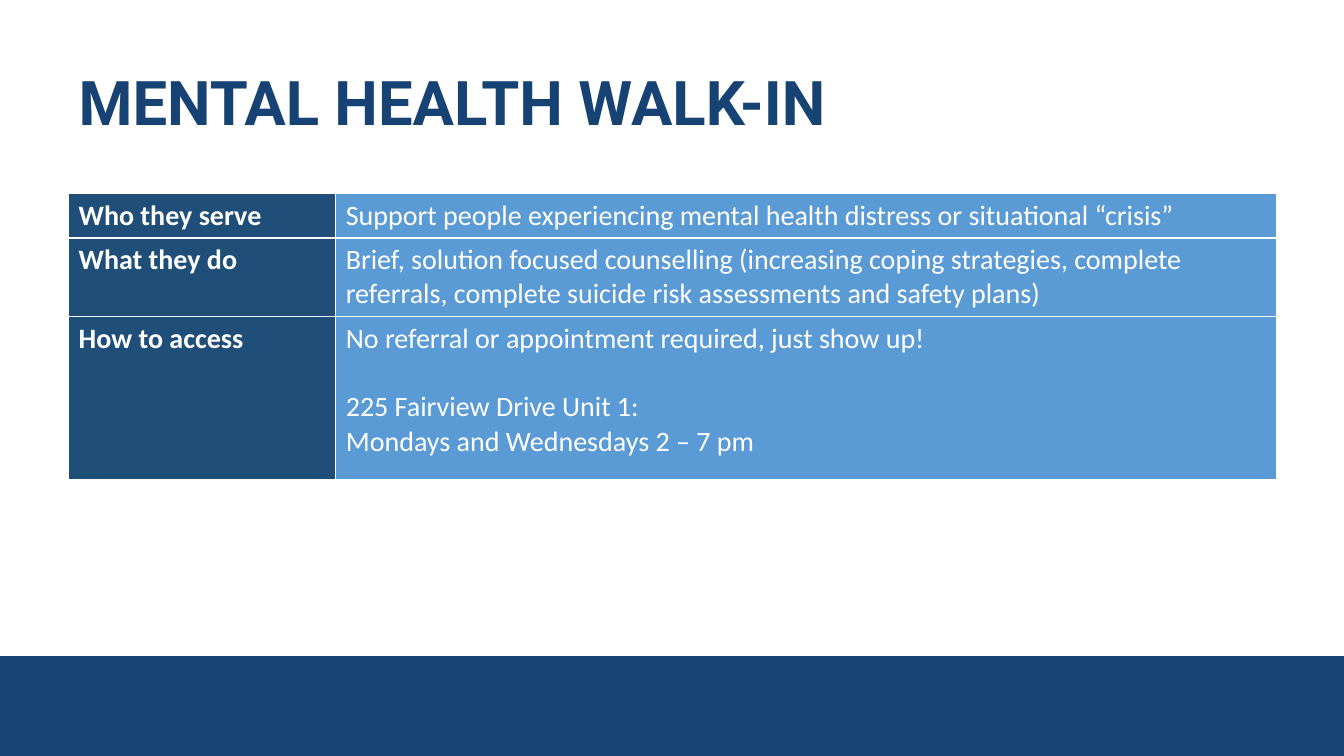
from dataclasses import dataclass

import lxml.etree
import pptx
import pptx.dml.color
import pptx.enum.shapes
import pptx.enum.text
import pptx.oxml.ns
import pptx.presentation
import pptx.slide
import pptx.table
import pptx.util
from pptx.util import Inches

COLORS = {
    "navy": "174274",
    "label": "1F4E79",
    "detail": "5B9BD5",
    "white": "FFFFFF",
}
MARGIN = 0.68
CONTENT_WIDTH = 11.98
LABEL_WIDTH = 2.65


@dataclass
class ServiceRow:
    label: str
    details: list[str]
    height: float


SERVICE_ROWS = [
    ServiceRow(
        "Who they serve",
        ["Support people experiencing mental health distress or situational “crisis”"],
        0.44,
    ),
    ServiceRow(
        "What they do",
        ["Brief, solution focused counselling (increasing coping strategies, complete "
         "referrals, complete suicide risk assessments and safety plans)"],
        0.78,
    ),
    ServiceRow(
        "How to access",
        ["No referral or appointment required, just show up!",
         "225 Fairview Drive Unit 1:",
         "Mondays and Wednesdays 2 – 7 pm"],
        1.62,
    ),
]
ADDRESS_PREFIX = "225 Fairview"


def color(name: str) -> pptx.dml.color.RGBColor:
    return pptx.dml.color.RGBColor.from_string(COLORS[name])


def add_footer_band(page: pptx.slide.Slide) -> None:
    band = page.shapes.add_shape(
        pptx.enum.shapes.MSO_SHAPE.RECTANGLE,
        Inches(0), Inches(6.51), Inches(13.33), Inches(0.99),
    )
    band.shadow.inherit = False
    band.fill.solid()
    band.fill.fore_color.rgb = color("navy")
    band.line.fill.background()


def format_title(page: pptx.slide.Slide, text: str) -> None:
    title = page.shapes.title
    title.left, title.top = Inches(MARGIN), Inches(0.4)
    title.width, title.height = Inches(CONTENT_WIDTH), Inches(1.29)
    title.text_frame.text = text
    title.text_frame.vertical_anchor = pptx.enum.text.MSO_ANCHOR.MIDDLE
    para = title.text_frame.paragraphs[0]
    para.alignment = pptx.enum.text.PP_ALIGN.LEFT
    para.line_spacing = 0.9
    para.font.name = "Roboto"
    para.font.size = pptx.util.Pt(44)
    para.font.bold = True
    para.font.color.rgb = color("navy")


def add_cell_borders(cell: pptx.table._Cell) -> None:
    properties = cell._tc.get_or_add_tcPr()
    qn = pptx.oxml.ns.qn
    for position, side in enumerate(("a:lnL", "a:lnR", "a:lnT", "a:lnB")):
        border = lxml.etree.Element(qn(side), w=str(pptx.util.Pt(1)))
        fill = lxml.etree.SubElement(border, qn("a:solidFill"))
        lxml.etree.SubElement(fill, qn("a:srgbClr"), val=COLORS["white"])
        properties.insert(position, border)


def fill_cell(cell: pptx.table._Cell, lines: list[str], fill: str, bold: bool) -> None:
    cell.fill.solid()
    cell.fill.fore_color.rgb = color(fill)
    add_cell_borders(cell)
    cell.text_frame.text = "\n".join(lines)
    for para in cell.text_frame.paragraphs:
        para.font.name = "Calibri"
        para.font.size = pptx.util.Pt(20)
        para.font.bold = bold
        para.font.color.rgb = color("white")
        # One line of space sets the address apart
        if para.text.startswith(ADDRESS_PREFIX):
            para.space_before = pptx.util.Pt(24.4)


def add_service_table(page: pptx.slide.Slide) -> None:
    total_height = sum(row.height for row in SERVICE_ROWS)
    table = page.shapes.add_table(
        len(SERVICE_ROWS), 2, Inches(MARGIN), Inches(1.92),
        Inches(CONTENT_WIDTH), Inches(total_height),
    ).table
    table.first_row = False
    table.horz_banding = False
    table.columns[0].width = Inches(LABEL_WIDTH)
    table.columns[1].width = Inches(CONTENT_WIDTH - LABEL_WIDTH)
    for index, row in enumerate(SERVICE_ROWS):
        table.rows[index].height = Inches(row.height)
        fill_cell(table.cell(index, 0), [row.label], "label", True)
        fill_cell(table.cell(index, 1), row.details, "detail", False)


def main() -> None:
    deck = pptx.Presentation()
    deck.slide_width, deck.slide_height = Inches(13.33), Inches(7.5)
    page = deck.slides.add_slide(deck.slide_layouts.get_by_name("Title Only"))

    # Footer band, title and table, from back to front
    add_footer_band(page)
    format_title(page, "MENTAL HEALTH WALK-IN")
    add_service_table(page)

    deck.save("out.pptx")


if __name__ == "__main__":
    main()
